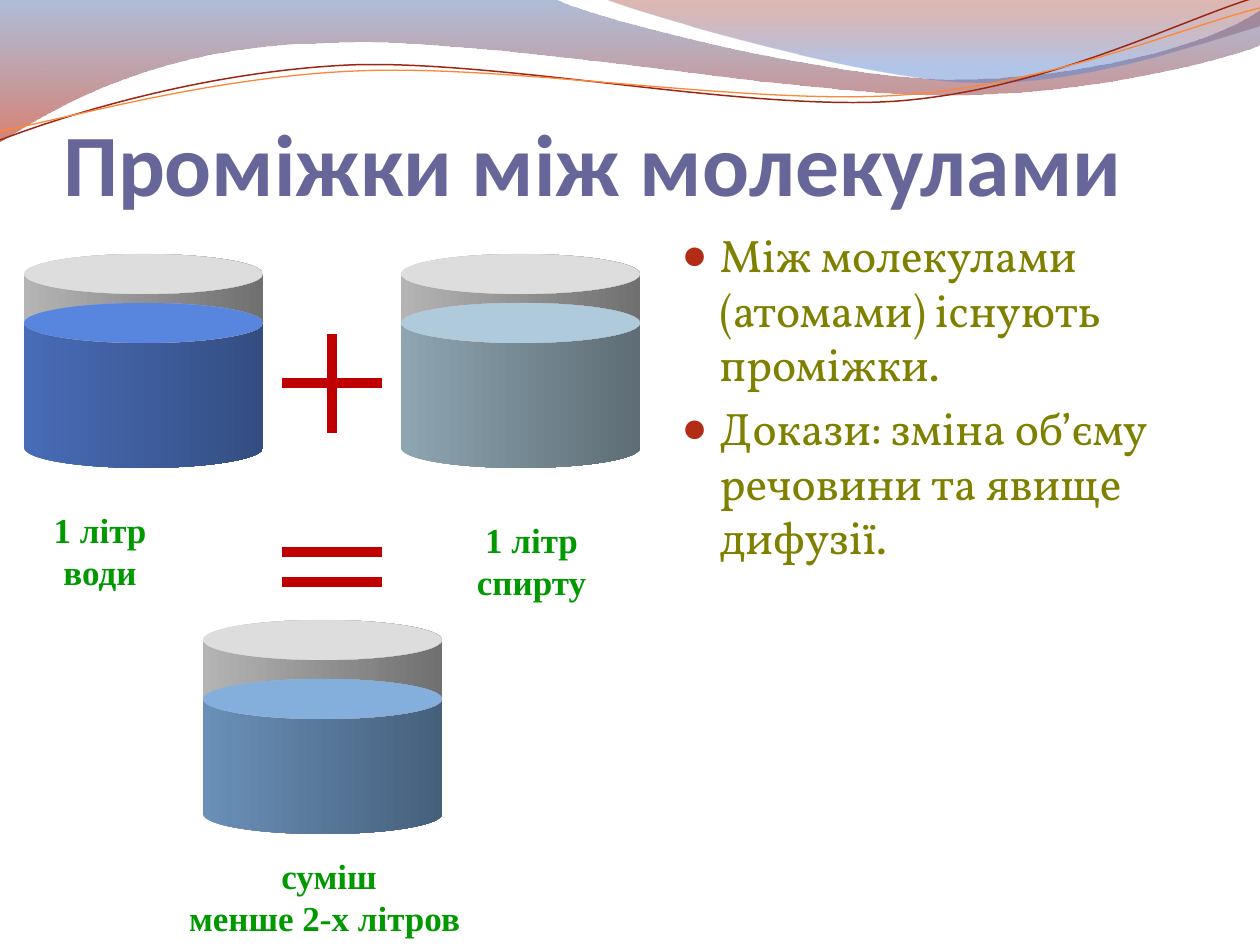
from lxml import etree
from pptx import Presentation
from pptx.dml.color import RGBColor
from pptx.enum.shapes import MSO_CONNECTOR, MSO_SHAPE
from pptx.enum.text import MSO_ANCHOR, MSO_AUTO_SIZE, PP_ALIGN
from pptx.oxml.ns import qn
from pptx.util import Pt

PX = 914400 / 126
STRAIGHT = MSO_CONNECTOR.STRAIGHT
CAN, OVAL = MSO_SHAPE.CAN, MSO_SHAPE.OVAL
LEFT, CENTER = PP_ALIGN.LEFT, PP_ALIGN.CENTER
TOP, BOTTOM = MSO_ANCHOR.TOP, MSO_ANCHOR.BOTTOM
NO_FIT, GROW = MSO_AUTO_SIZE.NONE, MSO_AUTO_SIZE.SHAPE_TO_FIT_TEXT

PURPLE = RGBColor(0x66, 0x66, 0x99)
OLIVE = RGBColor(0x80, 0x80, 0x00)
GREEN = RGBColor(0x00, 0x99, 0x00)
RED = RGBColor(0xC0, 0x00, 0x00)
BULLET = RGBColor(0xB3, 0x2C, 0x16)
WAVE_BLUE = RGBColor(0x4F, 0x6E, 0xA8)
WAVE_RED = RGBColor(0xB6, 0x1A, 0x00)
CREST_RED = RGBColor(0x95, 0x15, 0x00)
CREST_BLUE = RGBColor(0x56, 0x81, 0xD1)
DARK_RED = RGBColor(0x9E, 0x27, 0x13)
ORANGE = RGBColor(0xFE, 0x86, 0x37)
GLASS = (RGBColor(0xDD, 0xDD, 0xDD), RGBColor(0xB4, 0xB4, 0xB4), RGBColor(0x70, 0x70, 0x70))
WATER = (RGBColor(0x58, 0x85, 0xDE), RGBColor(0x48, 0x6C, 0xB6), RGBColor(0x34, 0x4E, 0x82))
ALCOHOL = (RGBColor(0xAF, 0xCB, 0xDB), RGBColor(0x8E, 0xA6, 0xB2), RGBColor(0x5E, 0x6D, 0x76))
MIXTURE = (RGBColor(0x84, 0xAE, 0xDC), RGBColor(0x6A, 0x90, 0xB8), RGBColor(0x46, 0x60, 0x7C))

JAR_W, JAR_H, RIM_H = 239, 214, 40

WAVE = [(0, 0), (554, -1), (600, 21, 837, 79, 955, 79), (1075, 79, 1207, 47, 1260, 11),
        (1261, 45), (1239, 55, 1096, 96, 940, 95), (784, 94, 481, 35, 324, 43),
        (163, 45, 58, 105, -1, 142)]
CREST = [(604, -1), (641, 14, 859, 78, 969, 82), (1079, 87, 1211, 40, 1260, 26), (1260, 0)]
RED_CURVE = [(0, 140), (60, 117, 199, 72, 349, 65), (498, 59, 747, 112, 898, 101),
             (1050, 89, 1182, 19, 1257, -3)]
ORANGE_CURVE = [(0, 131), (59, 121, 207, 77, 357, 71), (508, 64, 751, 106, 903, 95),
                (1053, 84, 1186, 26, 1260, 8)]


def emu(*lengths):
    return [round(v * PX) for v in lengths]


class Deck:
    def __init__(self):
        self.prs = Presentation()
        self.prs.slide_width, self.prs.slide_height = emu(1260, 945)
        self.s = self.prs.slides.add_slide(self.prs.slide_layouts[1])

    def gradient(self, sp, stops, angle):
        sp.fill.gradient()
        sp.fill.gradient_angle = angle
        for stop, (position, color, alpha) in zip(sp.fill.gradient_stops, stops):
            stop.position = position
            stop.color.rgb = color
        for clr, (_, _, alpha) in zip(sp._element.spPr.iter(qn("a:srgbClr")), stops):
            if alpha < 100:
                etree.SubElement(clr, qn("a:alpha"), val=str(alpha * 1000))

    def freeform(self, outline, closed):
        points = [emu(*piece[-2:]) for piece in outline]
        builder = self.s.shapes.build_freeform(*points[0], scale=1.0)
        builder.add_line_segments(points[1:], close=closed)
        sp = builder.convert_to_shape()
        sp.shadow.inherit = False
        segments = list(sp._element.spPr.iter(qn("a:lnTo")))
        for segment, piece in zip(segments, outline[1:]):
            if len(piece) == 6:
                self.bend(sp, segment, emu(*piece))
        return sp

    def bend(self, sp, segment, knots):
        bezier = etree.Element(qn("a:cubicBezTo"))
        for x, y in zip(knots[::2], knots[1::2]):
            etree.SubElement(bezier, qn("a:pt"), x=str(x - sp.left), y=str(y - sp.top))
        segment.getparent().replace(segment, bezier)

    def wave(self, outline, stops):
        sp = self.freeform(outline, True)
        self.gradient(sp, stops, 270)
        sp.line.fill.background()

    def curve(self, outline, color, width):
        sp = self.freeform(outline, False)
        sp.fill.background()
        sp.line.color.rgb = color
        sp.line.width = Pt(width)

    def shape(self, kind, x, y, w, h):
        sp = self.s.shapes.add_shape(kind, *emu(x, y, w, h))
        sp.shadow.inherit = False
        sp.line.fill.background()
        return sp

    def cylinder(self, x, y, h, colors):
        top, light, dark = colors
        body = self.shape(CAN, x, y, JAR_W, h)
        body.adjustments[0] = RIM_H / min(JAR_W, h)
        self.gradient(body, [(0, light, 100), (1, dark, 100)], 0)
        rim = self.shape(OVAL, x, y, JAR_W, RIM_H)
        rim.fill.solid()
        rim.fill.fore_color.rgb = top

    def jar(self, x, y, gap, liquid):
        self.cylinder(x, y, JAR_H, GLASS)
        self.cylinder(x, y + gap, JAR_H - gap, liquid)

    def bar(self, x1, y1, x2, y2):
        line = self.s.shapes.add_connector(STRAIGHT, *emu(x1, y1, x2, y2))
        line.line.color.rgb = RED
        line.line.width = Pt(6)
        etree.SubElement(line._element.spPr, qn("a:effectLst"))

    def run(self, p, text, size, font, color, bold):
        r = p.add_run()
        r.text = text
        r.font.size = Pt(size)
        r.font.name = font
        r.font.color.rgb = color
        r.font.bold = bold

    def paragraphs(self, tf, texts):
        for i, text in enumerate(texts):
            yield (tf.add_paragraph() if i else tf.paragraphs[0]), text

    def placeholder(self, index, x, y, w, h, anchor):
        sp = self.s.placeholders[index]
        sp.left, sp.top, sp.width, sp.height = emu(x, y, w, h)
        self.s.shapes._spTree.append(sp._element)
        tf = sp.text_frame
        tf.word_wrap = True
        tf.auto_size = NO_FIT
        tf.vertical_anchor = anchor
        return tf

    def title(self, text, x, y, w, h):
        tf = self.placeholder(0, x, y, w, h, BOTTOM)
        tf.margin_left = tf.margin_right = tf.margin_bottom = 0
        p = tf.paragraphs[0]
        p.alignment = LEFT
        self.run(p, text, 50, "Calibri", PURPLE, True)

    def bullets(self, texts, x, y, w, h):
        tf = self.placeholder(1, x, y, w, h, TOP)
        indent, = emu(38)
        for p, text in self.paragraphs(tf, texts):
            pPr = p._p.get_or_add_pPr()
            pPr.set("marL", str(indent))
            pPr.set("indent", str(-indent))
            clr = etree.SubElement(pPr, qn("a:buClr"))
            etree.SubElement(clr, qn("a:srgbClr"), val=str(BULLET))
            etree.SubElement(pPr, qn("a:buSzPct"), val="95000")
            etree.SubElement(pPr, qn("a:buChar"), char="●")
            p.space_before = Pt(0 if text == texts[0] else 5.2)
            self.run(p, text, 26, "Vollkorn", OLIVE, False)

    def label(self, texts, x, y, w, h, wrap=False):
        tf = self.s.shapes.add_textbox(*emu(x, y, w, h)).text_frame
        tf.word_wrap = wrap
        tf.auto_size = GROW
        for p, text in self.paragraphs(tf, texts):
            p.alignment = CENTER
            self.run(p, text, 20, "Times New Roman", GREEN, True)


def main():
    deck = Deck()
    deck.wave(WAVE, [(0, WAVE_BLUE, 45), (1, WAVE_RED, 55)])
    deck.wave(CREST, [(0, CREST_RED, 30), (0.8, CREST_BLUE, 45)])
    deck.curve(RED_CURVE, DARK_RED, 0.85)
    deck.curve(ORANGE_CURVE, ORANGE, 0.75)
    deck.title("Проміжки між молекулами", 63, 97, 1123, 117)
    deck.bullets(["Між молекулами (атомами) існують проміжки.",
                  "Докази: зміна об’єму речовини та явище дифузії."], 669, 221, 528, 624)
    for x, y, gap, liquid in [(24, 254, 49, WATER), (401, 254, 49, ALCOHOL),
                              (203, 620, 59, MIXTURE)]:
        deck.jar(x, y, gap, liquid)
    for y in (383, 552, 582):
        deck.bar(282, y, 382, y)
    deck.bar(332, 334, 332, 433)
    deck.label(["1 літр", "води"], 41, 502, 118, 97)
    deck.label(["1 літр", "спирту"], 464, 512, 135, 97)
    deck.label(["суміш", "менше 2-х літров "], 104, 848, 450, 97, wrap=True)
    deck.prs.save("out.pptx")


if __name__ == "__main__":
    main()
